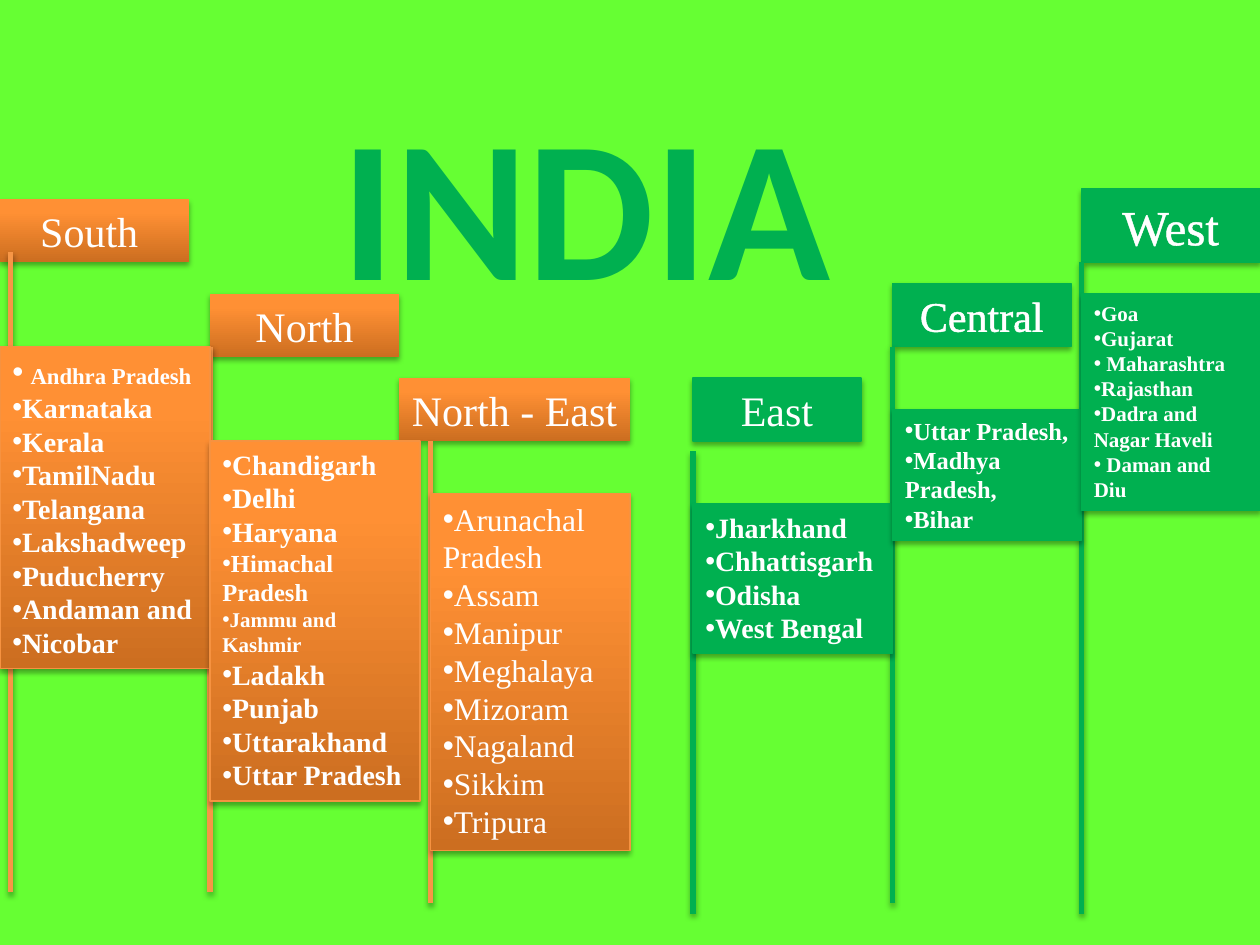
"""Build the slide of India's regions, drawn as flags on poles."""
from lxml.etree import SubElement
from pptx import Presentation
from pptx.dml.color import RGBColor
from pptx.enum.shapes import MSO_CONNECTOR, MSO_SHAPE
from pptx.enum.text import MSO_ANCHOR, MSO_AUTO_SIZE, PP_ALIGN
from pptx.oxml.ns import qn
from pptx.util import Inches, Pt

LIME = RGBColor(0x66, 0xFF, 0x33)
GREEN = RGBColor(0x00, 0xB0, 0x50)
DARK = RGBColor(0xCC, 0x6E, 0x20)
LIGHT = RGBColor(0xFF, 0x90, 0x34)
EDGE = RGBColor(0xF6, 0x92, 0x40)
POLE = RGBColor(0xF7, 0x96, 0x46)
WHITE = RGBColor(0xFF, 0xFF, 0xFF)
BLACK = RGBColor(0, 0, 0)
SERIF = "Times New Roman"

REGIONS = [
    dict(name="South ", size=24, warm=True, head=(0, 19, 18, 6), pole=(1, 24, 85),
         box=(0, 33, 20, 30.7), text=16, bold=True,
         items=["Andhra Pradesh", "Karnataka", "Kerala", "TamilNadu", "Telangana",
                "Lakshadweep", "Puducherry", "Andaman and", "Nicobar"]),
    dict(name="North", size=24, warm=True, head=(20, 28, 18, 6), pole=(20, 33, 85),
         box=(20, 42, 20, 34.3), text=16, bold=True,
         items=["Chandigarh", "Delhi", "Haryana", "Himachal Pradesh", "Jammu and Kashmir",
                "Ladakh", "Punjab", "Uttarakhand", "Uttar Pradesh"]),
    dict(name="North - East", size=24, warm=True, head=(38, 36, 22, 6), pole=(41, 42, 86),
         box=(41, 47, 19, 34), text=18, bold=False,
         items=["Arunachal Pradesh", "Assam", "Manipur", "Meghalaya", "Mizoram",
                "Nagaland", "Sikkim", "Tripura"]),
    dict(name="East", size=24, warm=False, head=(66, 36, 16, 6), pole=(66, 43, 87),
         box=(66, 48, 19, 14.2), text=16, bold=True,
         items=["Jharkhand", "Chhattisgarh", "Odisha", "West Bengal"]),
    dict(name="Central", size=24, warm=False, head=(85, 27, 17, 6), pole=(85, 33, 86),
         box=(85, 39, 18, 12.5), text=14, bold=True, rim=True,
         items=["Uttar Pradesh,", "Madhya Pradesh,", "Bihar"]),
    dict(name="West", size=28, warm=False, head=(103, 18, 17, 7), pole=(103, 25, 87),
         box=(103, 28, 17, 20.6), text=12, bold=True, rim=True,
         items=["Goa", "Gujarat", " Maharashtra", "Rajasthan", "Dadra and Nagar Haveli",
                " Daman and Diu"]),
]
SIZES = {"Himachal Pradesh": 14, "Jammu and Kashmir": 12}
LEAD = "Andhra Pradesh"

deck = Presentation()
deck.slide_width, deck.slide_height = Inches(10), Inches(7.5)
slide = deck.slides.add_slide(deck.slide_layouts[5])
slide.background.fill.solid()
slide.background.fill.fore_color.rgb = LIME
UNIT = deck.slide_width / 120


def grid(*cells):
    return [round(cell * UNIT) for cell in cells]


def shade(shape):
    group = SubElement(shape._element.spPr, qn("a:effectLst"))
    drop = SubElement(group, qn("a:outerShdw"), blurRad=str(Pt(3.1)), dist=str(Pt(1.8)),
                      dir="5400000", rotWithShape="0")
    tone = SubElement(drop, qn("a:srgbClr"), val="000000")
    SubElement(tone, qn("a:alpha"), val="35000")


def style(para, size, name=SERIF, color=WHITE, bold=False):
    font = para.font
    font.size, font.name, font.bold = Pt(size), name, bold
    font.color.rgb = color


def rim(para, color, width):
    props = para._p.pPr.find(qn("a:defRPr"))
    line = SubElement(props, qn("a:ln"), w=str(Pt(width)))
    fill = SubElement(line, qn("a:solidFill"))
    SubElement(fill, qn("a:srgbClr"), val=str(color))
    props.insert(0, line)


def panel(place, warm, edge):
    shape = slide.shapes.add_shape(MSO_SHAPE.RECTANGLE, *grid(*place))
    if warm:
        shape.fill.gradient()
        shape.fill.gradient_angle = 90
        low, high = shape.fill.gradient_stops
        low.color.rgb, low.position = DARK, 0
        high.color.rgb, high.position = LIGHT, 0.8
    else:
        shape.fill.solid()
        shape.fill.fore_color.rgb = GREEN
    if edge:
        shape.line.color.rgb = edge
        shape.line.width = Pt(0.75)
    else:
        shape.line.fill.background()
    shade(shape)
    shape.text_frame.word_wrap = True
    return shape.text_frame


def header(area):
    frame = panel(area["head"], area["warm"], None if area["warm"] else GREEN)
    frame.vertical_anchor = MSO_ANCHOR.MIDDLE
    para = frame.paragraphs[0]
    para.text = area["name"]
    para.alignment = PP_ALIGN.CENTER
    style(para, area["size"])
    if area.get("rim"):
        rim(para, WHITE, 1.45)


def pole(area):
    col, top, end = area["pole"]
    line = slide.shapes.add_connector(MSO_CONNECTOR.STRAIGHT, *grid(col, top, col, end))
    line.line.color.rgb = POLE if area["warm"] else GREEN
    line.line.width = Pt(3)
    shade(line)


def states(area):
    frame = panel(area["box"], area["warm"], EDGE if area["warm"] else GREEN)
    frame.vertical_anchor = MSO_ANCHOR.TOP
    frame.auto_size = MSO_AUTO_SIZE.SHAPE_TO_FIT_TEXT
    for rank, item in enumerate(area["items"]):
        para = frame.add_paragraph() if rank else frame.paragraphs[0]
        para.alignment = PP_ALIGN.LEFT
        props = para._p.get_or_add_pPr()
        props.set("marL", "0")
        props.set("indent", "0")
        SubElement(props, qn("a:buFont"), typeface="Arial")
        SubElement(props, qn("a:buChar"), char="•")
        style(para, SIZES.get(item, area["text"]), bold=area["bold"])
        if item == LEAD:
            gap = para.add_run()
            gap.text = " "
            gap.font.size, gap.font.name, gap.font.bold = Pt(18), "Calibri", False
        run = para.add_run()
        run.text = item
        if item == LEAD:
            run.font.size = Pt(13)


title = slide.shapes.title
title.left, title.top, title.width, title.height = grid(29, 13, 58, 12)
title.text_frame.auto_size = MSO_AUTO_SIZE.NONE
title.text_frame.vertical_anchor = MSO_ANCHOR.MIDDLE
word = title.text_frame.paragraphs[0]
word.text = "INDIA "
word.alignment = PP_ALIGN.CENTER
style(word, 115, "Calibri", GREEN, True)
rim(word, BLACK, 0.75)

for draw in (header, pole, states):
    for area in REGIONS:
        draw(area)

deck.save("out.pptx")
